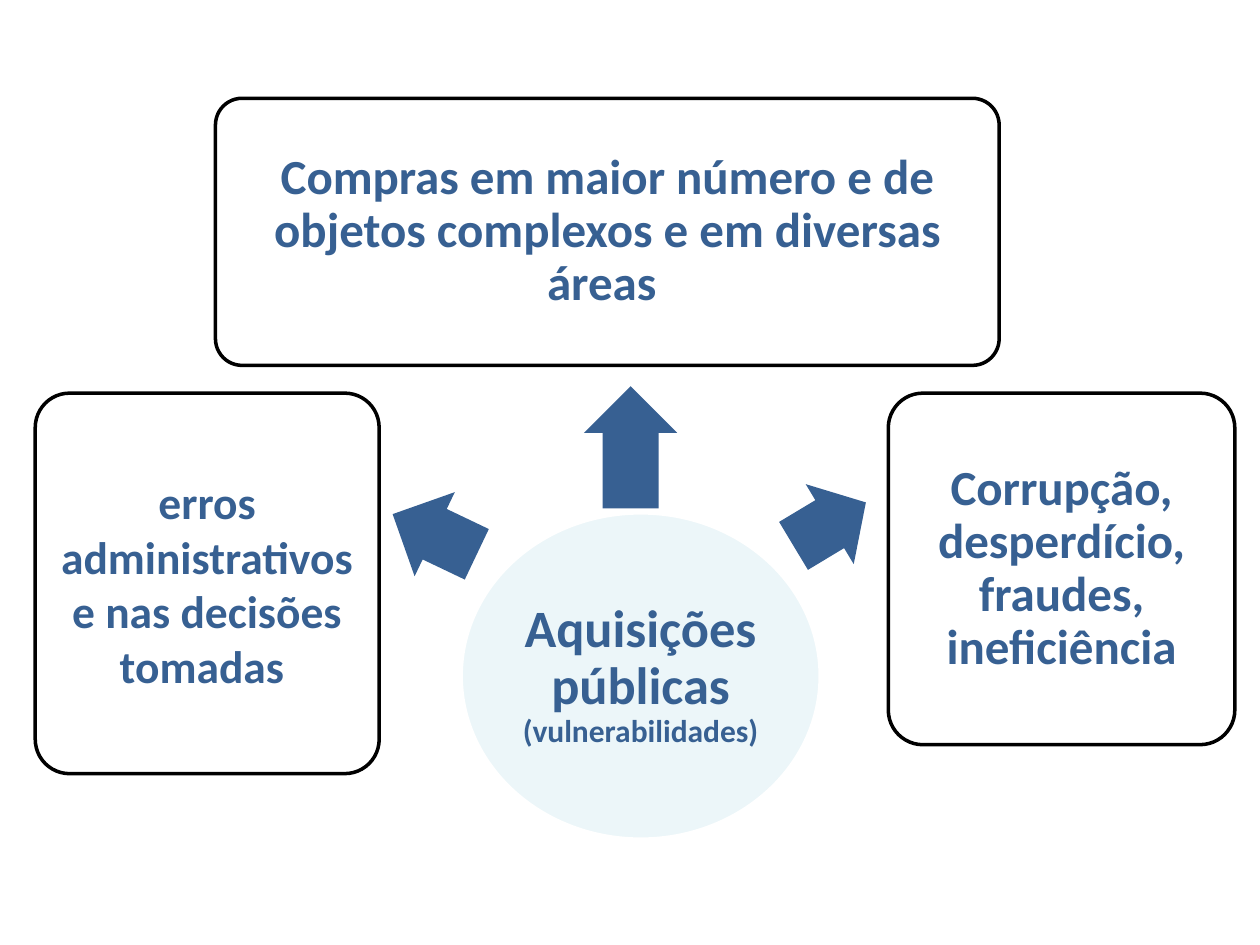
"""Build the slide on the vulnerabilities of public procurement."""
from dataclasses import dataclass

import pptx
import pptx.dml.color
import pptx.enum.shapes
import pptx.enum.text
import pptx.oxml.ns
import pptx.util
from lxml import etree

Inches = pptx.util.Inches
Pt = pptx.util.Pt
Kind = pptx.enum.shapes.MSO_SHAPE


@dataclass(frozen=True)
class Theme:
    font: str = "Calibri"
    accent: str = "376092"
    pale: str = "DBEEF4"
    white: str = "FFFFFF"
    black: str = "000000"
    pale_opacity: int = 52
    outline: float = 2
    hub_size: int = 30
    card_size: int = 28
    small_card_size: int = 26
    note_size: int = 18


THEME = Theme()


def color(value):
    return pptx.dml.color.RGBColor.from_string(value)


def add_box(page, kind, place, fill, line=None):
    """Add a flat preset shape; place is left, top, width, height in inches."""
    box = page.shapes.add_shape(kind, *map(Inches, place))
    box.shadow.inherit = False
    box.fill.solid()
    box.fill.fore_color.rgb = color(fill)
    if line:
        box.line.color.rgb = color(line)
        box.line.width = Pt(THEME.outline)
    else:
        box.line.fill.background()
    return box


def set_opacity(box, percent):
    solid = box.fill._xPr.find(pptx.oxml.ns.qn("a:solidFill"))
    alpha = etree.SubElement(solid[0], pptx.oxml.ns.qn("a:alpha"))
    alpha.set("val", str(percent * 1000))


def add_span(para, text, size):
    span = para.add_run()
    span.text = text
    span.font.name = THEME.font
    span.font.size = Pt(size)
    span.font.bold = True
    span.font.color.rgb = color(THEME.accent)


def write(box, *spans, inset=0.06, spacing=0.9):
    """Write (text, size) spans as one centred paragraph in the box."""
    frame = box.text_frame
    frame.word_wrap = True
    frame.vertical_anchor = pptx.enum.text.MSO_ANCHOR.MIDDLE
    frame.margin_left = frame.margin_right = Inches(inset)
    frame.margin_top = frame.margin_bottom = Inches(inset)
    para = frame.paragraphs[0]
    para.alignment = pptx.enum.text.PP_ALIGN.CENTER
    para.line_spacing = spacing
    for text, size in spans:
        add_span(para, text, size)


def add_card(page, place, text, size=THEME.card_size, **layout):
    card = add_box(page, Kind.ROUNDED_RECTANGLE, place, THEME.white, THEME.black)
    card.adjustments[0] = 0.1
    write(card, (text, size), **layout)


def add_arrow(page, place, rotation):
    arrow = add_box(page, Kind.RIGHT_ARROW, place, THEME.accent)
    arrow.adjustments[0] = 0.6
    arrow.adjustments[1] = 0.5
    arrow.rotation = rotation


def add_hub(page):
    hub = add_box(page, Kind.OVAL, (3.66, 4.07, 2.85, 2.59), THEME.pale, THEME.white)
    set_opacity(hub, THEME.pale_opacity)
    write(hub, ("Aquisições públicas ", THEME.hub_size),
          ("(vulnerabilidades)", THEME.note_size), inset=0.02)


def main():
    deck = pptx.Presentation()
    deck.slide_width, deck.slide_height = Inches(10), Inches(7.5)
    page = deck.slides.add_slide(deck.slide_layouts[6])

    add_hub(page)
    add_arrow(page, (3.08, 3.87, 0.74, 0.74), 205.5)
    add_card(page, (0.28, 3.12, 2.73, 3.02),
             "erros administrativos e nas decisões tomadas ",
             THEME.small_card_size, inset=0.05, spacing=1.0)
    add_arrow(page, (4.52, 3.18, 0.97, 0.74), 270)
    add_card(page, (1.71, 0.78, 6.22, 2.12),
             "Compras em maior número e de objetos complexos e em diversas áreas ")
    add_arrow(page, (6.25, 3.79, 0.67, 0.74), 329)
    add_card(page, (7.05, 3.12, 2.75, 2.79),
             "Corrupção, desperdício, fraudes, ineficiência")

    deck.save("out.pptx")


if __name__ == "__main__":
    main()
